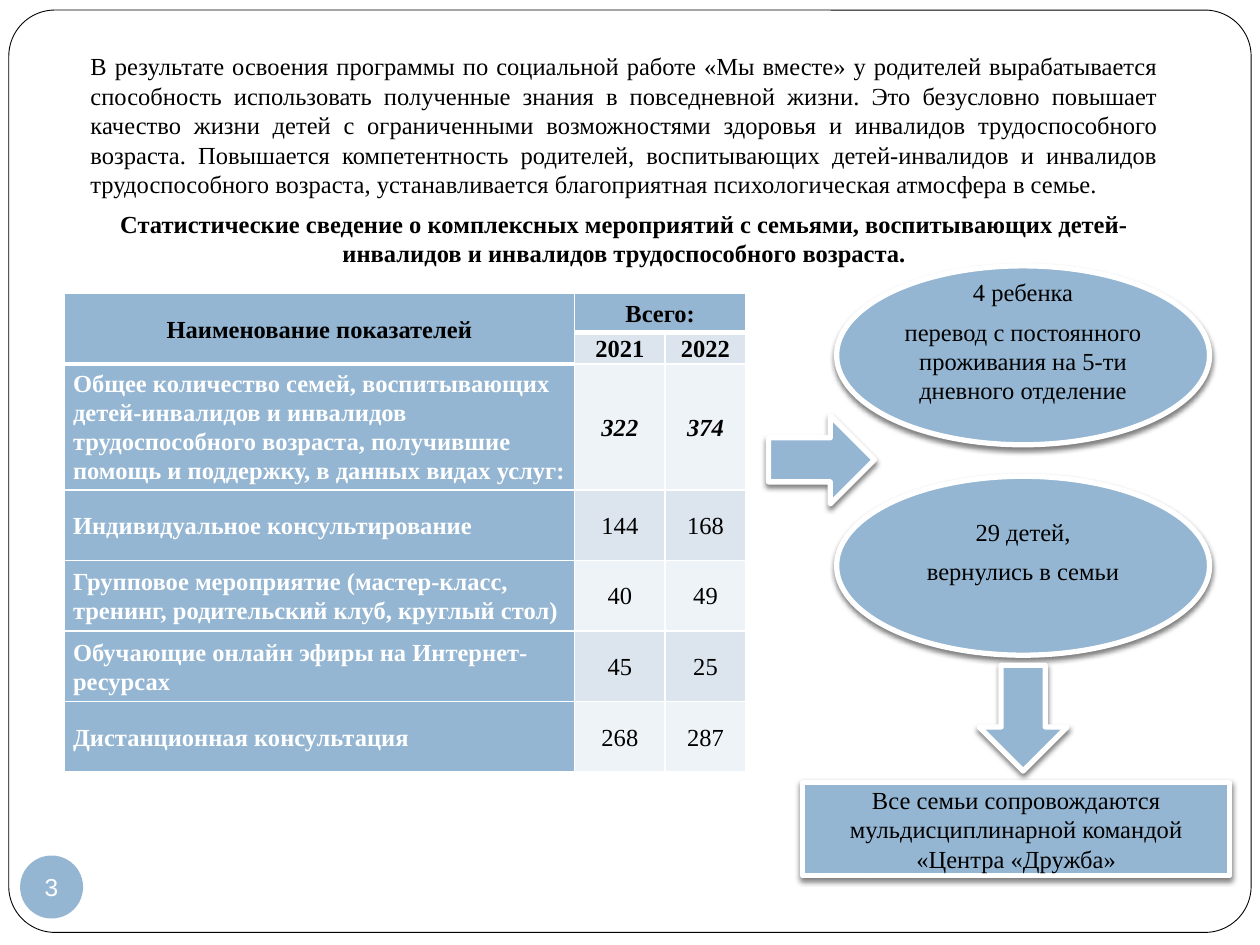
import pptx
import pptx.dml.color
import pptx.enum.shapes
import pptx.enum.text
import pptx.oxml
import pptx.oxml.ns
import pptx.util

SHAPE = pptx.enum.shapes.MSO_SHAPE
ALIGN = pptx.enum.text.PP_ALIGN
MIDDLE = pptx.enum.text.MSO_ANCHOR.MIDDLE
NAMESPACE = pptx.oxml.ns.nsdecls("a")
BLUE, PALE, PALER, WHITE, BLACK = "94B6D2", "DCE5EE", "EEF3F7", "FFFFFF", "000000"


def color(value):
    return pptx.dml.color.RGBColor.from_string(value)


class SlideBuilder:
    font = "Times New Roman"
    size = 14
    columns, rows = 100, 75

    def __init__(self, presentation):
        self.width = presentation.slide_width
        self.height = presentation.slide_height
        self.slide = presentation.slides.add_slide(presentation.slide_layouts[6])

    def across(self, count):
        return round(self.width * count / self.columns)

    def down(self, count):
        return round(self.height * count / self.rows)

    def box(self, left, top, width, height):
        return self.across(left), self.down(top), self.across(width), self.down(height)

    def add_text_run(self, paragraph, text, ink=BLACK, bold=False, italic=False,
                     align=ALIGN.CENTER, font=None):
        paragraph.alignment = align
        run = paragraph.add_run()
        run.text = text
        run.font.name = font or self.font
        run.font.size = pptx.util.Pt(self.size)
        run.font.bold = bold
        run.font.italic = italic
        run.font.color.rgb = color(ink)

    def fill_frame(self, frame, texts, gap=0, styles=None):
        frame.word_wrap = True
        for index, text in enumerate(texts):
            paragraph = frame.paragraphs[0] if index == 0 else frame.add_paragraph()
            paragraph.space_before = pptx.util.Pt(gap if index else 0)
            self.add_text_run(paragraph, text, **(styles[index] if styles else {}))

    def text(self, area, texts, gap, styles):
        shape = self.slide.shapes.add_textbox(*self.box(*area))
        self.fill_frame(shape.text_frame, texts, gap, styles)

    def shape(self, kind, area, fill=BLUE, line=None, weight=1):
        shape = self.slide.shapes.add_shape(kind, *self.box(*area))
        shape.shadow.inherit = False
        shape.fill.solid()
        shape.fill.fore_color.rgb = color(fill)
        if line:
            shape.line.color.rgb = color(line)
            shape.line.width = pptx.util.Pt(weight)
        else:
            shape.line.fill.background()
        return shape

    def frame(self, area):
        shape = self.shape(SHAPE.ROUNDED_RECTANGLE, area, WHITE, BLACK, 0.5)
        shape.adjustments[0] = 0.05

    def badge(self, area, text):
        shape = self.shape(SHAPE.OVAL, area)
        frame = shape.text_frame
        frame.margin_left = frame.margin_right = frame.margin_top = frame.margin_bottom = 0
        frame.vertical_anchor = MIDDLE
        self.fill_frame(frame, [text], styles=[dict(ink=WHITE, font="Arial")])
        frame.word_wrap = False

    def raised(self, kind, area, texts=(), gap=0, lift=0.5, rotation=0):
        shape = self.shape(kind, area, BLUE, WHITE, 3)
        shape.rotation = rotation
        effects = shape._element.spPr.find(pptx.oxml.ns.qn("a:effectLst"))
        effects.append(pptx.oxml.parse_xml(
            f'<a:outerShdw {NAMESPACE} blurRad="{pptx.util.Pt(3)}" dist="{pptx.util.Pt(2)}" '
            f'dir="5400000" rotWithShape="0"><a:srgbClr val="{BLACK}">'
            '<a:alpha val="50000"/></a:srgbClr></a:outerShdw>'))
        shape.text_frame.vertical_anchor = MIDDLE
        shape.text_frame.margin_bottom = self.down(lift)
        self.fill_frame(shape.text_frame, texts, gap)

    def cell(self, cell, text, fill, bottom=1, **style):
        cell.margin_left = cell.margin_right = self.across(0.7)
        cell.margin_top = cell.margin_bottom = 0
        cell.vertical_anchor = MIDDLE
        properties = cell._tc.get_or_add_tcPr()
        for side, weight in zip("LRTB", (1, 1, 1, bottom)):
            properties.append(pptx.oxml.parse_xml(
                f'<a:ln{side} {NAMESPACE} w="{pptx.util.Pt(weight)}"><a:solidFill>'
                f'<a:srgbClr val="{WHITE}"/></a:solidFill></a:ln{side}>'))
        cell.fill.solid()
        cell.fill.fore_color.rgb = color(fill)
        if text:
            paragraph = cell.text_frame.paragraphs[0]
            paragraph.line_spacing = 1.07
            self.add_text_run(paragraph, text, **style)

    def table(self, area, widths, heights, title, total, years, records):
        table = self.slide.shapes.add_table(
            len(heights), len(widths), *self.box(*area)).table
        for column, width in zip(table.columns, widths):
            column.width = self.across(width)
        for row, height in zip(table.rows, heights):
            row.height = self.down(height)
        for index, text in enumerate((title, total, "")):
            self.cell(table.cell(0, index), text, BLUE, 3, bold=True)
        self.cell(table.cell(1, 0), "", BLUE, 3)
        for index, year in enumerate(years, 1):
            self.cell(table.cell(1, index), year, PALE, bold=True)
        table.cell(0, 0).merge(table.cell(1, 0))
        table.cell(0, 1).merge(table.cell(0, 2))
        for row, (label, *values) in enumerate(records, 2):
            self.cell(table.cell(row, 0), label, BLUE, ink=WHITE, bold=True, align=ALIGN.LEFT)
            for column, value in enumerate(values, 1):
                self.cell(table.cell(row, column), value, PALE if row % 2 else PALER,
                          bold=row == 2, italic=row == 2)


def main():
    presentation = pptx.Presentation()
    presentation.slide_width = pptx.util.Inches(10)
    presentation.slide_height = pptx.util.Inches(7.5)
    builder = SlideBuilder(presentation)

    builder.frame((0.7, 0.8, 98.6, 73.2))
    builder.badge((1.6, 67.9, 5, 5), "3")
    builder.text((6.2, 3.6, 86.7, 65.4), [
        "В результате освоения программы по социальной работе «Мы вместе» у родителей "
        "вырабатывается способность использовать полученные знания в повседневной жизни. "
        "Это безусловно повышает качество жизни детей с ограниченными возможностями здоровья "
        "и инвалидов трудоспособного возраста. Повышается компетентность родителей, "
        "воспитывающих детей-инвалидов и инвалидов трудоспособного возраста, "
        "устанавливается благоприятная психологическая атмосфера в семье.",
        "Статистические сведение о комплексных мероприятий с семьями, воспитывающих "
        "детей-инвалидов и инвалидов трудоспособного возраста.",
    ], 5.8, [dict(align=ALIGN.JUSTIFY), dict(bold=True)])

    builder.table(
        (5.1, 23.3, 54.1, 40.5), (40.5, 7.2, 6.4), (3.1, 1.6, 8.6) + (5.6,) * 4,
        "Наименование показателей", "Всего:", ("2021", "2022"), [
            ("Общее количество семей, воспитывающих детей-инвалидов и инвалидов "
             "трудоспособного возраста, получившие помощь и поддержку, в данных видах услуг:",
             "322", "374"),
            ("Индивидуальное консультирование", "144", "168"),
            ("Групповое мероприятие (мастер-класс, тренинг, родительский клуб, круглый стол)",
             "40", "49"),
            ("Обучающие онлайн эфиры на Интернет-ресурсах", "45", "25"),
            ("Дистанционная консультация", "268", "287"),
        ])

    outcomes = [
        ("4 ребенка", "перевод с постоянного проживания на 5-ти дневного отделение"),
        ("29 детей,", "вернулись в семьи"),
    ]
    for index, texts in enumerate(outcomes):
        builder.raised(SHAPE.OVAL, (66.4, 21.1 + 16.7 * index, 29.6, 14.2), texts, 6, 2.8)
    builder.raised(SHAPE.RECTANGLE, (63.7, 62.1, 33.9, 7.4), [
        "Все семьи сопровождаются", "мульдисциплинарной командой", "«Центра «Дружба»"])
    for left, top, rotation in ((61, 33, 0), (77, 53.5, 90)):
        builder.raised(SHAPE.RIGHT_ARROW, (left, top, 8.4, 7), rotation=rotation)

    presentation.save("out.pptx")


if __name__ == "__main__":
    main()
